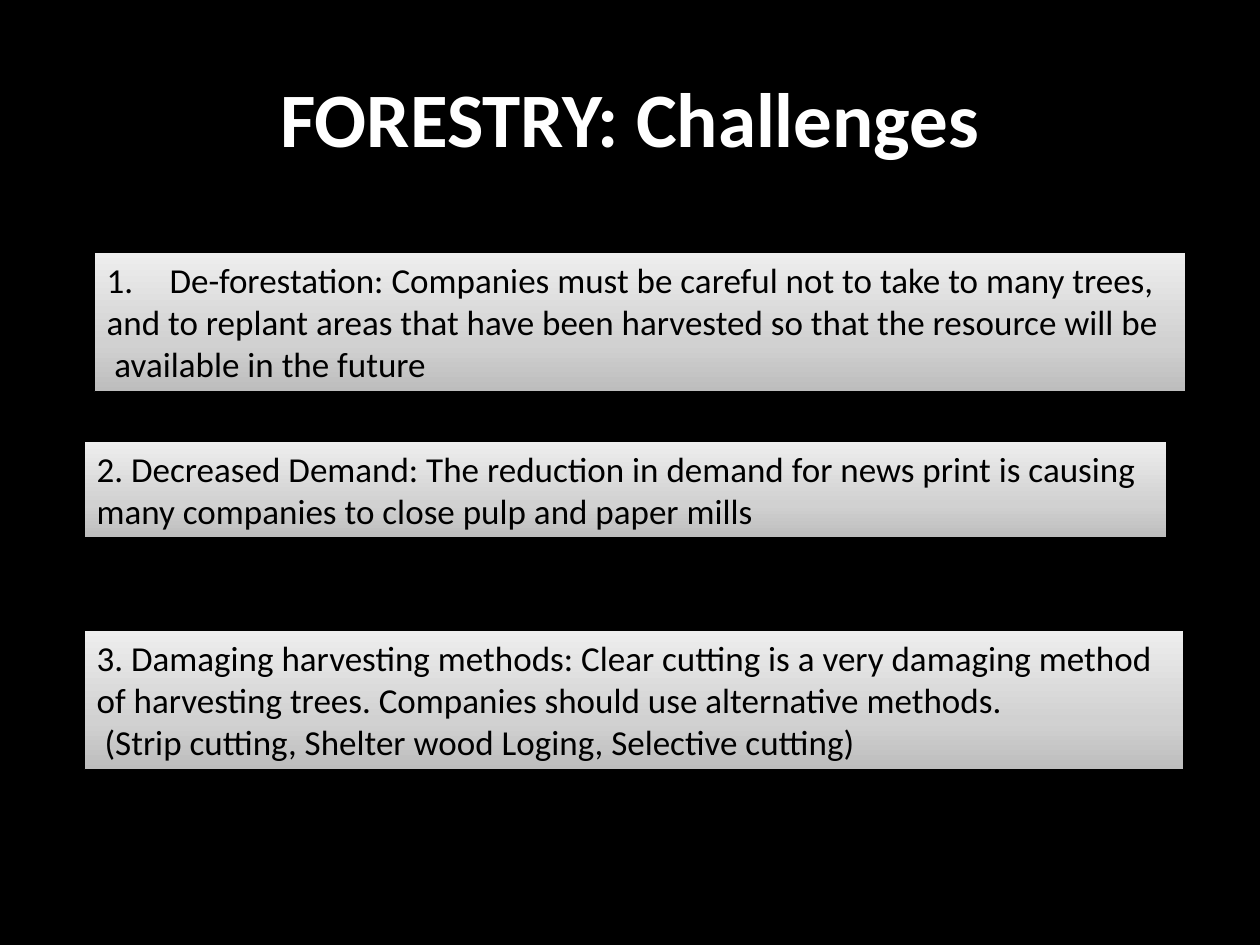
from copy import deepcopy
from dataclasses import dataclass

from lxml.etree import SubElement
from pptx import Presentation
from pptx.dml.color import RGBColor
from pptx.enum.text import MSO_ANCHOR, MSO_AUTO_SIZE, PP_ALIGN
from pptx.oxml.ns import qn
from pptx.util import Cm, Pt

COLORS = {
    "black": "000000",
    "white": "FFFFFF",
    "gray_bottom": "BDBDBD",
    "gray_middle": "D1D1D1",
    "gray_top": "EEEEEE",
}
GRADIENT = [(0, "gray_bottom"), (0.35, "gray_middle"), (1, "gray_top")]
FONT = "Calibri"
FIRST_TOP, STEP = 5.08, 3.81


@dataclass
class Challenge:
    left: float
    width: float
    height: float
    lines: list[str]
    auto_number: bool = False


CHALLENGES = [
    Challenge(1.9, 22, 2.82, [
        "De-forestation: Companies must be careful not to take to many trees,",
        "and to replant areas that have been harvested so that the resource will be",
        " available in the future",
    ], auto_number=True),
    Challenge(1.7, 21.82, 1.96, [
        "2. Decreased Demand: The reduction in demand for news print is causing",
        "many companies to close pulp and paper mills",
    ]),
    Challenge(1.7, 22.17, 2.82, [
        "3. Damaging harvesting methods: Clear cutting is a very damaging method",
        "of harvesting trees. Companies should use alternative methods.",
        " (Strip cutting, Shelter wood Loging, Selective cutting)",
    ]),
]


def rgb(name: str) -> RGBColor:
    return RGBColor.from_string(COLORS[name])


def style_paragraph(para, size: int, color: str, bold: bool = False) -> None:
    para.font.name = FONT
    para.font.size = Pt(size)
    para.font.bold = bold
    para.font.color.rgb = rgb(color)


def number_paragraph(para) -> None:
    """Number the paragraph automatically, with a hanging indent."""
    properties = para._p.get_or_add_pPr()
    properties.set("marL", str(Cm(1.27)))
    properties.set("indent", str(-Cm(1.27)))
    SubElement(properties, qn("a:buFont"), typeface="+mj-lt")
    SubElement(properties, qn("a:buAutoNum"), type="arabicPeriod")


def fill_gradient(box) -> None:
    box.fill.gradient()
    box.fill.gradient_angle = 90
    stop_list = box._element.spPr.find(qn("a:gradFill")).find(qn("a:gsLst"))
    stop_list.insert(1, deepcopy(stop_list[0]))
    for stop, (position, color) in zip(box.fill.gradient_stops, GRADIENT):
        stop.position = position
        stop.color.rgb = rgb(color)


def add_title(page, text: str) -> None:
    title = page.shapes.title
    title.left, title.top, title.width, title.height = Cm(1.27), Cm(0.76), Cm(22.86), Cm(3.18)
    title.fill.solid()
    title.fill.fore_color.rgb = rgb("black")
    title.text_frame.text = text
    title.text_frame.vertical_anchor = MSO_ANCHOR.MIDDLE
    para = title.text_frame.paragraphs[0]
    para.alignment = PP_ALIGN.CENTER
    style_paragraph(para, 44, "white", bold=True)


def add_challenge(page, challenge: Challenge, top: float) -> None:
    box = page.shapes.add_textbox(
        Cm(challenge.left), Cm(top), Cm(challenge.width), Cm(challenge.height))
    fill_gradient(box)
    box.line.color.rgb = rgb("black")
    box.line.width = Pt(0.75)
    frame = box.text_frame
    frame.word_wrap = False
    frame.auto_size = MSO_AUTO_SIZE.SHAPE_TO_FIT_TEXT
    frame.text = "\n".join(challenge.lines)
    if challenge.auto_number:
        number_paragraph(frame.paragraphs[0])
    for para in frame.paragraphs:
        style_paragraph(para, 20, "black")


def main() -> None:
    deck = Presentation()
    deck.slide_width, deck.slide_height = Cm(25.4), Cm(19.05)
    page = deck.slides.add_slide(deck.slide_layouts.get_by_name("Title Only"))
    page.background.fill.solid()
    page.background.fill.fore_color.rgb = rgb("black")
    add_title(page, "FORESTRY: Challenges")
    for index, challenge in enumerate(CHALLENGES):
        add_challenge(page, challenge, FIRST_TOP + index * STEP)
    deck.save("out.pptx")


if __name__ == "__main__":
    main()
